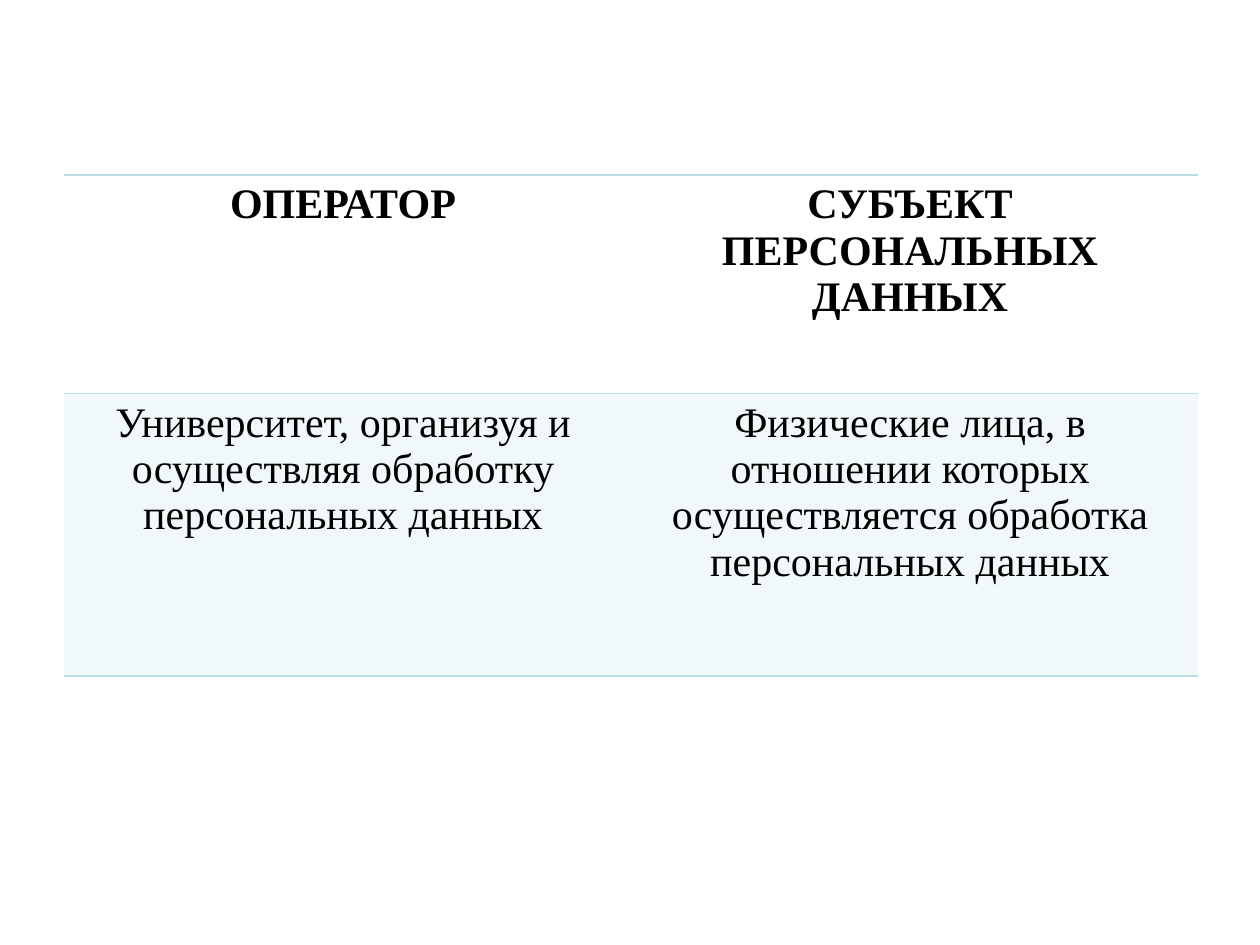
from lxml import etree
from pptx import Presentation
from pptx.dml.color import RGBColor
from pptx.enum.text import PP_ALIGN
from pptx.oxml.ns import qn
from pptx.util import Cm, Pt

CENTER = PP_ALIGN.CENTER
COLORS = {"text": "000000", "accent": "BBE0E3"}
ROLES = [
    ["ОПЕРАТОР", "СУБЪЕКТ ПЕРСОНАЛЬНЫХ ДАННЫХ"],
    [
        "Университет, организуя и осуществляя обработку персональных данных",
        "Физические лица, в отношении которых осуществляется обработка персональных данных",
    ],
]


class SlideBuilder:
    font_name = "Times New Roman"
    font_size = Pt(24)
    rule_width = Pt(1)
    tint_percent = 20

    def __init__(self, slide):
        self.slide = slide

    def table(self, rows, left, top, widths, heights):
        frame = self.slide.shapes.add_table(
            len(rows), len(widths), left, top, sum(widths), sum(heights)
        )
        table = frame.table
        table.horz_banding = False
        for column, width in zip(table.columns, widths):
            column.width = width
        for index, (row, height, texts) in enumerate(zip(table.rows, heights, rows)):
            row.height = height
            for cell, text in zip(row.cells, texts):
                self.cell(cell, text, is_header=index == 0)

    def cell(self, cell, text, is_header):
        cell.text_frame.text = text
        paragraph = cell.text_frame.paragraphs[0]
        paragraph.alignment = CENTER
        font = paragraph.runs[0].font
        font.name = self.font_name
        font.size = self.font_size
        font.bold = is_header
        font.color.rgb = RGBColor.from_string(COLORS["text"])
        self.borders(cell)
        if is_header:
            cell.fill.background()
        else:
            self.tint(cell)

    def borders(self, cell):
        properties = cell._tc.get_or_add_tcPr()
        for side in ("lnL", "lnR"):
            line = etree.SubElement(properties, qn(f"a:{side}"), w="0")
            etree.SubElement(line, qn("a:noFill"))
        for side in ("lnT", "lnB"):
            line = etree.SubElement(properties, qn(f"a:{side}"), w=str(self.rule_width))
            fill = etree.SubElement(line, qn("a:solidFill"))
            etree.SubElement(fill, qn("a:srgbClr"), val=COLORS["accent"])

    def tint(self, cell):
        cell.fill.solid()
        cell.fill.fore_color.rgb = RGBColor.from_string(COLORS["accent"])
        color = cell._tc.tcPr.find(qn("a:solidFill")).find(qn("a:srgbClr"))
        etree.SubElement(color, qn("a:alpha"), val=str(self.tint_percent * 1000))


def main():
    presentation = Presentation()
    presentation.slide_width = Cm(25.4)
    presentation.slide_height = Cm(19.05)
    builder = SlideBuilder(presentation.slides.add_slide(presentation.slide_layouts[6]))
    builder.table(
        ROLES,
        left=Cm(1.3),
        top=Cm(3.53),
        widths=[Cm(11.23), Cm(11.63)],
        heights=[Cm(4.4), Cm(5.7)],
    )
    presentation.save("out.pptx")


if __name__ == "__main__":
    main()
